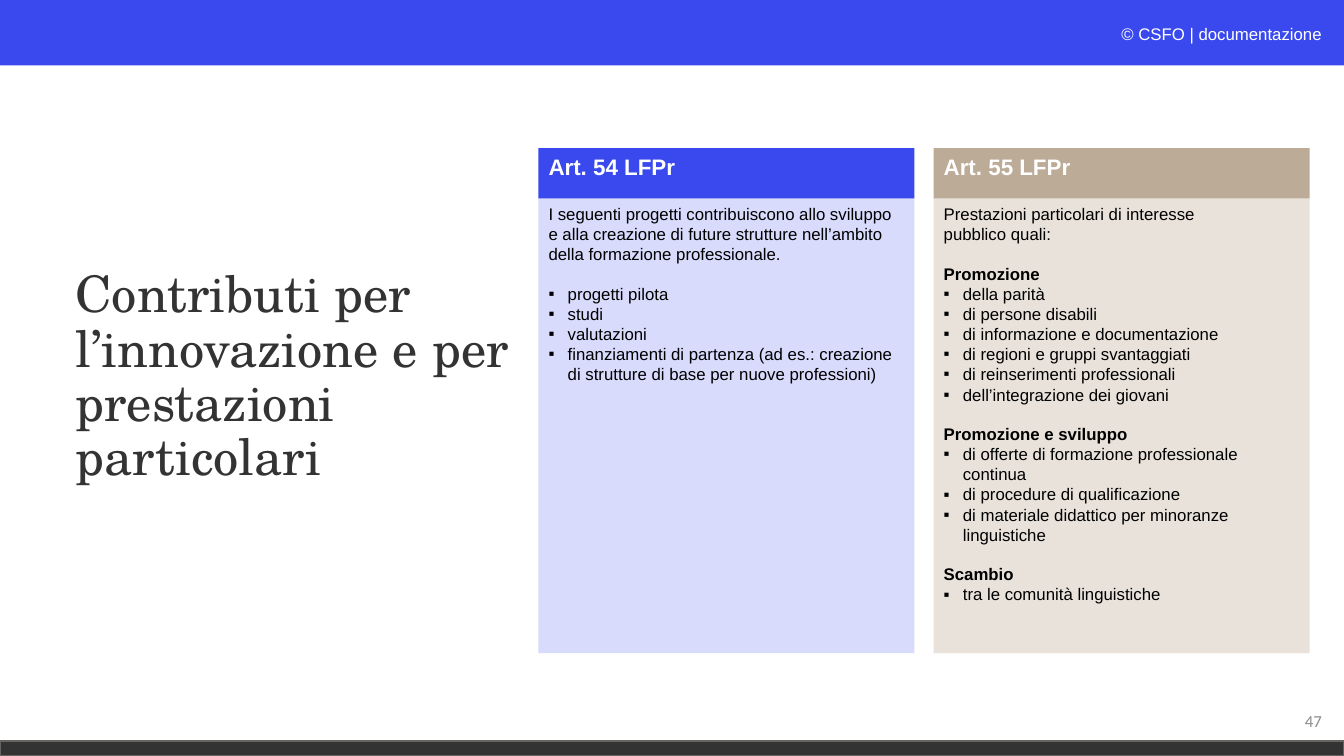
from dataclasses import dataclass

from lxml import etree
from pptx import Presentation
from pptx.dml.color import RGBColor
from pptx.enum.shapes import MSO_SHAPE
from pptx.enum.text import MSO_ANCHOR, MSO_AUTO_SIZE, PP_ALIGN
from pptx.oxml.ns import qn
from pptx.util import Inches, Pt

RECTANGLE = MSO_SHAPE.RECTANGLE
TOP, MIDDLE = MSO_ANCHOR.TOP, MSO_ANCHOR.MIDDLE
LEFT, RIGHT = PP_ALIGN.LEFT, PP_ALIGN.RIGHT
NO_AUTOFIT = MSO_AUTO_SIZE.NONE

COMPARISON_LAYOUT = 4
BLUE, DARK, WHITE, BLACK = "3A49EE", "333333", "FFFFFF", "000000"
SLIDE_WIDTH = 13.33
COLUMN_LEFT, COLUMN_STEP, COLUMN_WIDTH = 5.34, 3.92, 3.73
HEADER_TOP, HEADER_HEIGHT, BODY_HEIGHT = 1.47, 0.5, 4.51
BULLET_INDENT = 0.19
BLANK_LINE = 13.8


@dataclass
class Line:
    text: str
    bullet: bool = False
    bold: bool = False
    space_before: float = 0


@dataclass
class Column:
    heading: str
    header_color: str
    body_color: str
    lines: list[Line]


def bullets(*texts: str, space_before: float = 0) -> list[Line]:
    return [Line(text, bullet=True, space_before=0 if index else space_before)
            for index, text in enumerate(texts)]


def section(heading: str, *texts: str) -> list[Line]:
    return [Line(heading, bold=True, space_before=BLANK_LINE), *bullets(*texts)]


COLUMNS = [
    Column("Art. 54 LFPr", BLUE, "D8DBFC", [
        Line("I seguenti progetti contribuiscono allo sviluppo e alla creazione "
             "di future strutture nell’ambito della formazione professionale."),
        *bullets("progetti pilota", "studi", "valutazioni",
                 "finanziamenti di partenza (ad es.: creazione di strutture "
                 "di base per nuove professioni)", space_before=BLANK_LINE),
    ]),
    Column("Art. 55 LFPr", "BCAB96", "E8E2DB", [
        Line("Prestazioni particolari di interesse"),
        Line("pubblico quali:"),
        *section("Promozione", "della parità", "di persone disabili",
                 "di informazione e documentazione",
                 "di regioni e gruppi svantaggiati",
                 "di reinserimenti professionali",
                 "dell’integrazione dei giovani"),
        *section("Promozione e sviluppo",
                 "di offerte di formazione professionale continua",
                 "di procedure di qualificazione",
                 "di materiale didattico per minoranze linguistiche"),
        *section("Scambio", "tra le comunità linguistiche"),
    ]),
]


def set_fill(shape, color: str) -> None:
    shape.fill.solid()
    shape.fill.fore_color.rgb = RGBColor.from_string(color)


def place(shape, left: float, top: float, width: float, height: float) -> None:
    shape.left, shape.top = Inches(left), Inches(top)
    shape.width, shape.height = Inches(width), Inches(height)


def set_bullet(paragraph, bullet: bool) -> None:
    properties = paragraph._p.get_or_add_pPr()
    indent = Inches(BULLET_INDENT) if bullet else 0
    properties.set("marL", str(indent))
    properties.set("indent", str(-indent))
    if bullet:
        etree.SubElement(properties, qn("a:buFont"), typeface="Arial")
        etree.SubElement(properties, qn("a:buChar"), char="▪")
    else:
        etree.SubElement(properties, qn("a:buNone"))


def write_lines(shape, lines: list[Line], *, size: float = 12, font: str = "Arial",
                color: str = BLACK, align=LEFT, anchor=TOP,
                line_spacing: float = 1.0) -> None:
    frame = shape.text_frame
    frame.word_wrap = True
    frame.auto_size = NO_AUTOFIT
    frame.vertical_anchor = anchor
    for index, line in enumerate(lines):
        paragraph = frame.add_paragraph() if index else frame.paragraphs[0]
        set_bullet(paragraph, line.bullet)
        paragraph.alignment = align
        paragraph.line_spacing = line_spacing
        paragraph.space_before = Pt(line.space_before)
        paragraph.space_after = Pt(0)
        run = paragraph.add_run()
        run.text = line.text
        run.font.name = font
        run.font.size = Pt(size)
        run.font.bold = line.bold
        run.font.color.rgb = RGBColor.from_string(color)


def add_band(slide, top: float, height: float, color: str):
    band = slide.shapes.add_shape(RECTANGLE, 0, Inches(top),
                                  Inches(SLIDE_WIDTH), Inches(height))
    band.shadow.inherit = False
    set_fill(band, color)
    band.line.fill.background()
    return band


def add_label(slide, text: str, left: float, top: float, width: float,
              height: float, **text_format) -> None:
    label = slide.shapes.add_textbox(Inches(left), Inches(top),
                                     Inches(width), Inches(height))
    write_lines(label, [Line(text)], align=RIGHT, **text_format)


def fill_column(header, body, left: float, column: Column) -> None:
    place(header, left, HEADER_TOP, COLUMN_WIDTH, HEADER_HEIGHT)
    set_fill(header, column.header_color)
    write_lines(header, [Line(column.heading, bold=True)], size=16, color=WHITE)
    place(body, left, HEADER_TOP + HEADER_HEIGHT, COLUMN_WIDTH, BODY_HEIGHT)
    set_fill(body, column.body_color)
    write_lines(body, column.lines)


def main() -> None:
    presentation = Presentation()
    presentation.slide_width = Inches(SLIDE_WIDTH)
    presentation.slide_height = Inches(7.5)
    slide = presentation.slides.add_slide(presentation.slide_layouts[COMPARISON_LAYOUT])

    title, *column_boxes = slide.placeholders
    place(title, 0.65, 1.7, 5.07, 4.1)
    write_lines(title, [Line("Contributi per l’innovazione e per prestazioni particolari")],
                size=36, font="TeX Gyre Schola", color=DARK, anchor=MIDDLE,
                line_spacing=0.9)

    for index, column in enumerate(COLUMNS):
        header, body = column_boxes[2 * index:2 * index + 2]
        fill_column(header, body, COLUMN_LEFT + index * COLUMN_STEP, column)

    add_band(slide, 0, 0.65, BLUE)
    footer = add_band(slide, 7.35, 0.15, DARK)
    footer.line.color.rgb = RGBColor.from_string("666360")
    footer.line.width = Pt(1)
    add_label(slide, "© CSFO | documentazione", 8.62, 0.19, 4.59, 0.3, color=WHITE)
    add_label(slide, "47", 10.21, 6.95, 3, 0.4, font="Calibri", color="8C8C8C",
              anchor=MIDDLE)

    presentation.save("out.pptx")


if __name__ == "__main__":
    main()
